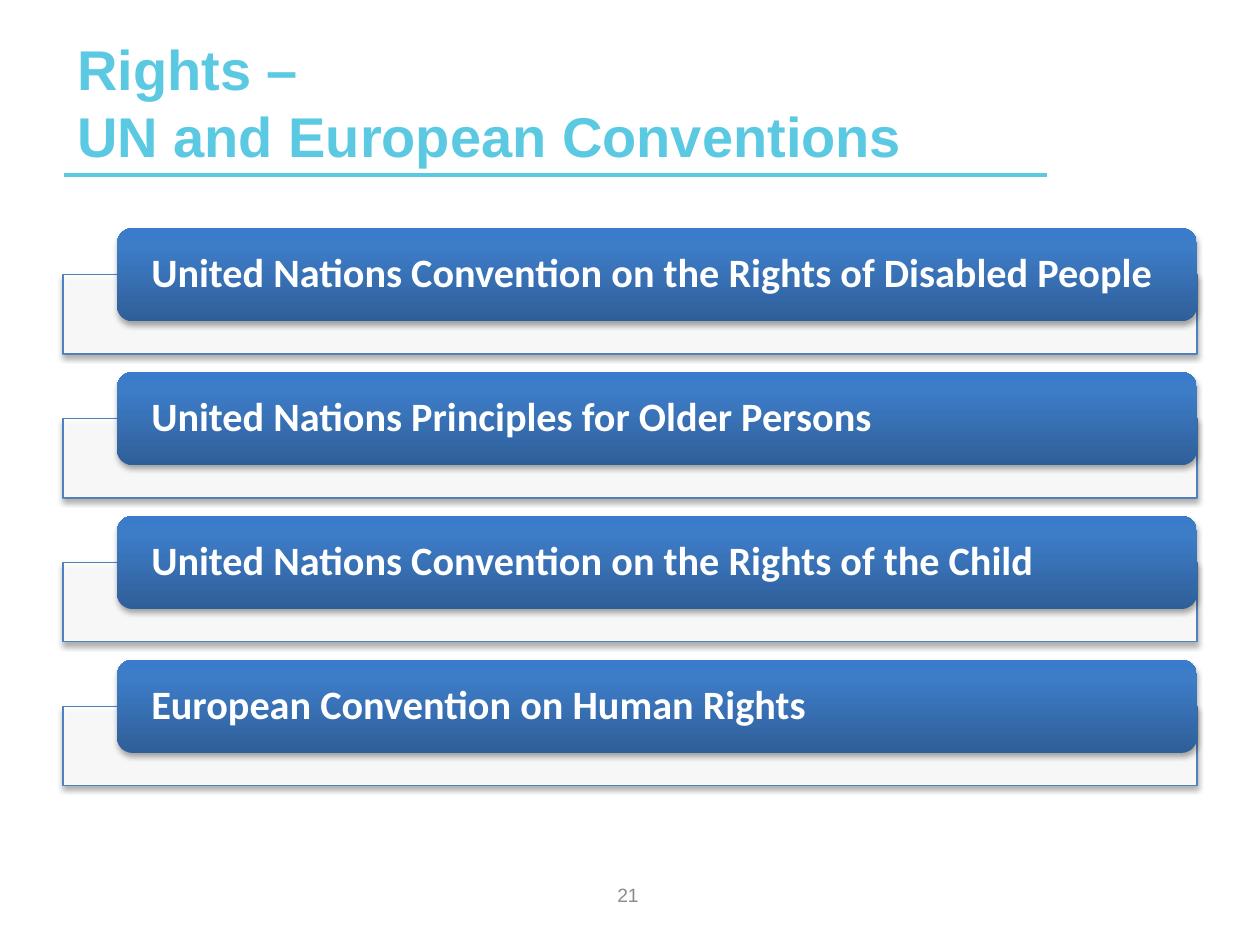
from copy import deepcopy

from lxml import etree
from pptx import Presentation
from pptx.dml.color import RGBColor
from pptx.enum.shapes import MSO_CONNECTOR, MSO_SHAPE
from pptx.enum.text import MSO_ANCHOR, MSO_AUTO_SIZE, PP_ALIGN
from pptx.oxml.ns import qn
from pptx.util import Cm, Pt

AQUA = RGBColor(0x5C, 0xC9, 0xE3)
GREY = RGBColor(0x8C, 0x8C, 0x8C)
WHITE = RGBColor(0xFF, 0xFF, 0xFF)
OUTLINE = RGBColor(0x4F, 0x81, 0xBD)
BAR_STOPS = [
    (0, RGBColor(0x2F, 0x5F, 0x99)),
    (0.8, RGBColor(0x3D, 0x7C, 0xC7)),
    (1, RGBColor(0x3A, 0x7C, 0xCB)),
]

CONVENTIONS = [
    "United Nations Convention on the Rights of Disabled People",
    "United Nations Principles for Older Persons",
    "United Nations Convention on the Rights of the Child",
    "European Convention on Human Rights",
]


def write_text(sp, text, size, color, font="Arial", bold=False,
               align=PP_ALIGN.LEFT, anchor=MSO_ANCHOR.MIDDLE, line_spacing=None):
    tf = sp.text_frame
    tf.text = text
    tf.word_wrap = True
    tf.auto_size = MSO_AUTO_SIZE.NONE
    tf.vertical_anchor = anchor
    for p in tf.paragraphs:
        p.alignment = align
        p.space_before = Pt(0)
        p.line_spacing = line_spacing
        for r in p.runs:
            r.font.name, r.font.size, r.font.bold = font, Pt(size), bold
            r.font.color.rgb = color


def add_effects(sp):
    """Give a shape an empty effect list and return it."""
    sp_pr = sp._element.spPr
    for old in sp_pr.findall(qn("a:effectLst")):
        sp_pr.remove(old)
    return etree.SubElement(sp_pr, qn("a:effectLst"))


def add_shadow(sp):
    shadow = etree.SubElement(add_effects(sp), qn("a:outerShdw"), blurRad=str(Pt(3.15)),
                              dist=str(Pt(1.8)), dir="5400000", rotWithShape="0")
    color = etree.SubElement(shadow, qn("a:srgbClr"), val="000000")
    etree.SubElement(color, qn("a:alpha"), val="35000")


def fill_gradient(sp, stops):
    """Fill from bottom to top with any number of colour stops."""
    sp.fill.gradient()
    sp.fill.gradient_angle = 90
    gs_lst = sp._element.spPr.find(qn("a:gradFill")).find(qn("a:gsLst"))
    while len(gs_lst) < len(stops):
        gs_lst.append(deepcopy(gs_lst[0]))
    for stop, (position, color) in zip(sp.fill.gradient_stops, stops):
        stop.position = position
        stop.color.rgb = color


def add_heading(slide, left, top, width, height):
    title = slide.shapes.title
    title.left, title.top, title.width, title.height = left, top, width, height
    write_text(title, "Rights –\nUN and European Conventions", 32, AQUA,
               bold=True, anchor=MSO_ANCHOR.BOTTOM)
    bottom = top + height
    rule = slide.shapes.add_connector(MSO_CONNECTOR.STRAIGHT, left, bottom,
                                      left + width, bottom)
    rule.line.color.rgb = AQUA
    rule.line.width = Pt(2)
    add_effects(rule)


def add_convention(slide, text, left, top, width):
    """Place a label bar over the upper part of an outlined panel."""
    panel = slide.shapes.add_shape(MSO_SHAPE.RECTANGLE, left, top + Cm(0.94),
                                   width, Cm(1.6))
    panel.fill.solid()
    panel.fill.fore_color.rgb = WHITE
    color = panel._element.spPr.find(qn("a:solidFill"))[0]
    etree.SubElement(color, qn("a:alpha"), val="90000")
    panel.line.color.rgb = OUTLINE
    panel.line.width = Pt(0.75)
    add_shadow(panel)

    indent = Cm(1.09)
    bar = slide.shapes.add_shape(MSO_SHAPE.ROUNDED_RECTANGLE, left + indent, top,
                                 width - indent, Cm(1.88))
    fill_gradient(bar, BAR_STOPS)
    bar.line.fill.background()
    add_shadow(bar)
    tf = bar.text_frame
    tf.margin_left = tf.margin_right = Cm(0.6)
    tf.margin_top = tf.margin_bottom = 0
    write_text(bar, text, 23, WHITE, font="Calibri", bold=True, line_spacing=0.9)


def add_convention_list(slide, left, top, width, pitch):
    for i, text in enumerate(CONVENTIONS):
        add_convention(slide, text, left, top + i * pitch, width)


def add_page_number(slide, left, top, width, height):
    box = slide.shapes.add_textbox(left, top, width, height)
    write_text(box, "21", 11, GREY, align=PP_ALIGN.CENTER)


def main():
    prs = Presentation()
    prs.slide_width, prs.slide_height = Cm(25.4), Cm(19.05)
    slide = prs.slides.add_slide(prs.slide_layouts[5])
    add_heading(slide, Cm(1.3), Cm(0.75), Cm(19.8), Cm(2.78))
    add_convention_list(slide, Cm(1.27), Cm(4.6), Cm(22.86), Cm(2.9))
    add_page_number(slide, Cm(9.7), Cm(17.53), Cm(5.92), Cm(1.02))
    prs.save("out.pptx")


if __name__ == "__main__":
    main()
